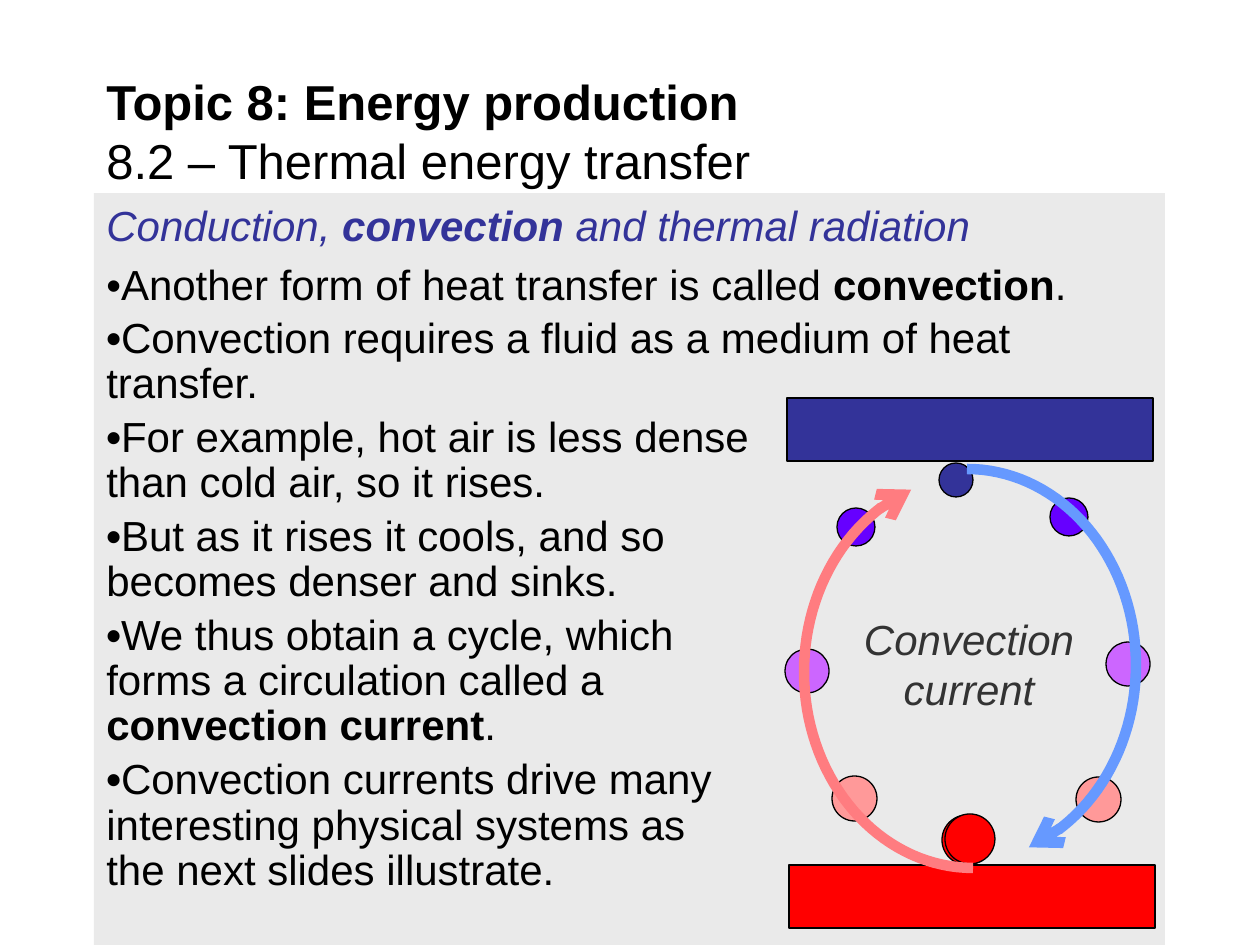
import math
import pptx
import pptx.util
import pptx.dml.color
import pptx.enum.shapes
import pptx.enum.text
from lxml import etree

HUES = {
    "black": "000000", "panel": "EAEAEA", "navy": "333399", "red": "FF0000",
    "pink": "FF9999", "mauve": "CC66FF", "violet": "6600FF", "grey": "333333",
    "rise": "FF7C80", "sink": "6699FF",
}
TITLE = [[("Topic 8: Energy production\n", "b"), ("8.2 – Thermal energy transfer", "")]]
BODY = [
    [("Conduction, ", "i"), ("convection ", "bi"), ("and thermal radiation", "i")],
    [("•Another form of heat transfer is called ", ""), ("convection", "b"), (".", "")],
    [("•", "b"), ("Convection requires a fluid as a medium of heat transfer.", "")],
    [("•", "b"), ("For example, hot air is less dense\nthan cold air, so it rises.", "")],
    [("•", "b"), ("But as it rises it cools, and so\nbecomes denser and sinks.", "")],
    [("•", "b"), ("We thus obtain a cycle, which\nforms a circulation called a\n", ""),
     ("convection current", "b"), (".", "")],
    [("•", "b"), ("Convection currents drive many\ninteresting physical systems as\n"
                  "the next slides illustrate.", "")],
]
LABEL = [[("Convection current", "i")]]
PLATES = [(789, 865, "red"), (787, 398, "navy")]
BALLS = [
    (942, 815, 50, "red"), (832, 776, 45, "pink"), (785, 649, 44, "mauve"),
    (837, 508, 38, "violet"), (939, 463, 34, "navy"), (1050, 498, 38, "violet"),
    (1106, 642, 44, "mauve"), (1076, 777, 45, "pink"), (945, 814, 50, "red"),
]
ARCS = [(973, 672, 90, "rise"), (967, 665, 270, "sink")]
RX, RY, SWEEP, STEPS = 169, 196, 158.5, 60

SCALE = 914400 / 126
KIND = pptx.enum.shapes.MSO_SHAPE
ALIGN = pptx.enum.text.PP_ALIGN
ANCHOR = pptx.enum.text.MSO_ANCHOR


def emu(px):
    return round(px * SCALE)


def hue(name):
    return pptx.dml.color.RGBColor.from_string(HUES[name])


def write(shape, paras, size=24, color="black", head=None, align=ALIGN.LEFT,
          anchor=ANCHOR.TOP, gap=0, tight=None):
    frame = shape.text_frame
    frame.word_wrap = True
    frame.vertical_anchor = anchor
    for n, runs in enumerate(paras):
        para = frame.add_paragraph() if n else frame.paragraphs[0]
        para.alignment = align
        if n and gap:
            para.space_before = pptx.util.Pt(gap)
        if n > 1 and tight:
            para.line_spacing = tight
        for text, style in runs:
            for k, line in enumerate(text.split("\n")):
                if k:
                    para.add_line_break()
                if not line:
                    continue
                run = para.add_run()
                run.text = line
                font = run.font
                font.name = "Arial"
                font.size = pptx.util.Pt(size)
                font.bold = "b" in style
                font.italic = "i" in style
                font.color.rgb = hue(head if head and n == 0 else color)


def draw(slide, kind, box, fill, edge=True):
    shape = slide.shapes.add_shape(kind, *map(emu, box))
    shape.shadow.inherit = False
    shape.fill.solid()
    shape.fill.fore_color.rgb = hue(fill)
    if edge:
        shape.line.color.rgb = hue("black")
        shape.line.width = pptx.util.Pt(0.75)
    else:
        shape.line.fill.background()
    return shape


def sweep(slide, cx, cy, start, color):
    turns = [math.radians(start + SWEEP * n / STEPS) for n in range(STEPS + 1)]
    spots = [(emu(cx + RX * math.cos(t)), emu(cy + RY * math.sin(t))) for t in turns]
    pen = slide.shapes.build_freeform(*spots[0])
    pen.add_line_segments(spots[1:], close=False)
    shape = pen.convert_to_shape()
    shape.shadow.inherit = False
    shape.fill.background()
    shape.line.color.rgb = hue(color)
    shape.line.width = pptx.util.Pt(6)
    line = shape.line._get_or_add_ln()
    space = "{http://schemas.openxmlformats.org/drawingml/2006/main}"
    etree.SubElement(line, space + "round")
    etree.SubElement(line, space + "tailEnd", type="arrow")


def main():
    deck = pptx.Presentation()
    deck.slide_width, deck.slide_height = emu(1260), emu(945)
    slide = deck.slides.add_slide(deck.slide_layouts[6])

    panel = draw(slide, KIND.RECTANGLE, (94, 193, 1071, 752), "panel", edge=False)
    write(panel, BODY, head="navy", gap=4.8, tight=0.9)
    title = slide.shapes.add_textbox(*map(emu, (94, 73, 1071, 115)))
    write(title, TITLE, size=28, anchor=ANCHOR.MIDDLE)

    for x, y, fill in PLATES:
        draw(slide, KIND.RECTANGLE, (x, y, 366, 63), fill)
    for x, y, size, fill in BALLS:
        draw(slide, KIND.OVAL, (x, y, size, size), fill)
    for arc in ARCS:
        sweep(slide, *arc)

    label = slide.shapes.add_textbox(*map(emu, (835, 607, 268, 113)))
    write(label, LABEL, color="grey", align=ALIGN.CENTER)
    deck.save("out.pptx")


if __name__ == "__main__":
    main()
